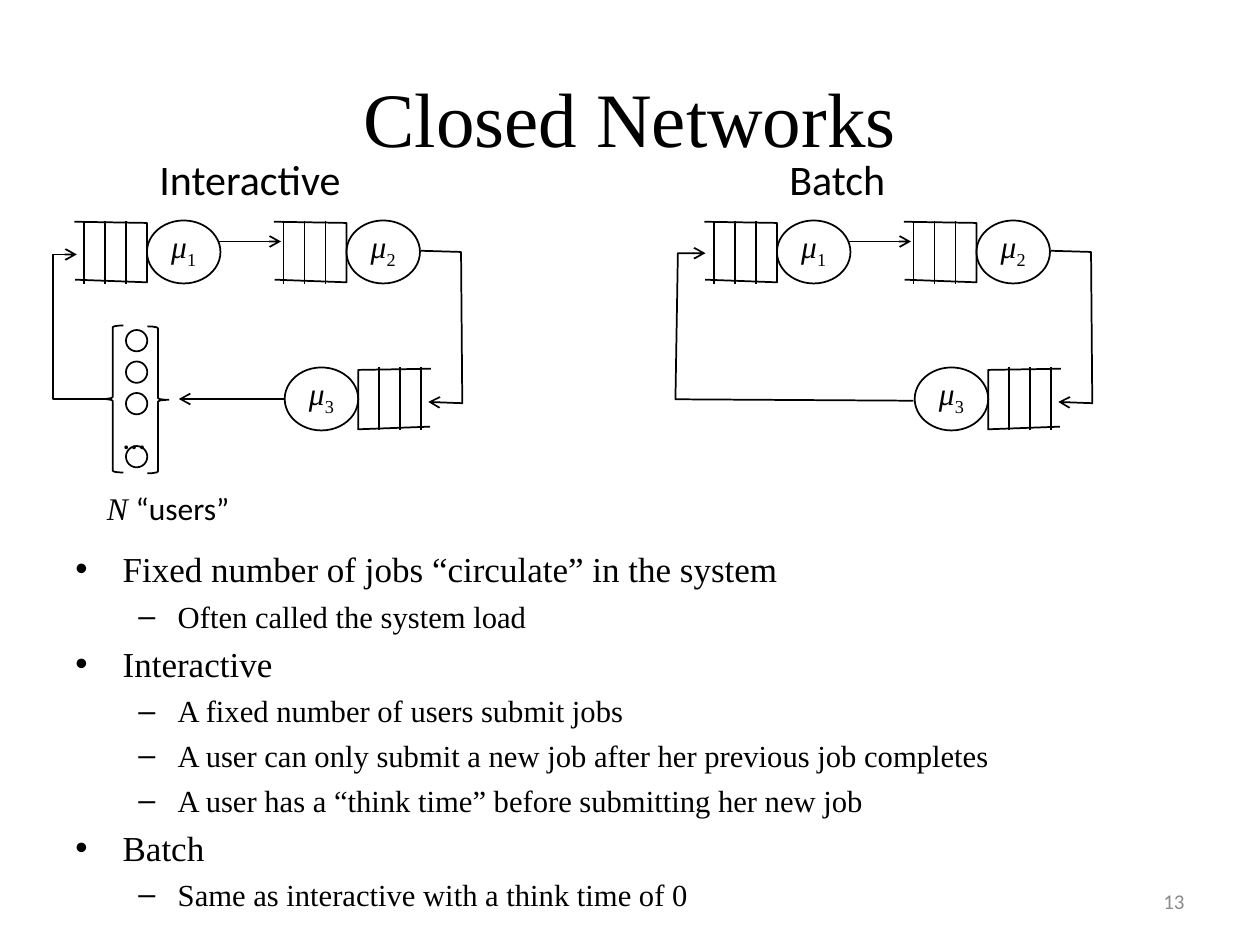
from lxml.etree import SubElement
from pptx import Presentation
from pptx.dml.color import RGBColor
from pptx.enum.shapes import MSO_CONNECTOR as Link, MSO_SHAPE as Kind
from pptx.enum.text import MSO_ANCHOR as Anchor, PP_ALIGN as Align
from pptx.oxml.ns import qn
from pptx.util import Pt

BLACK = RGBColor(0, 0, 0)
GRAY = RGBColor(0x8C, 0x8C, 0x8C)
SERIF, SANS = "Times New Roman", "Calibri"

TITLE = "Closed Networks"
BULLETS = [
    (0, "Fixed number of jobs “circulate” in the system"),
    (1, "Often called the system load"),
    (0, "Interactive"),
    (1, "A fixed number of users submit jobs"),
    (1, "A user can only submit a new job after her previous job completes"),
    (1, "A user has a “think time” before submitting her new job"),
    (0, "Batch"),
    (1, "Same as interactive with a think time of 0"),
]
# bullet sign, text size, left margin, hanging indent
LEVELS = [("•", 20, 27, 27), ("–", 17.5, 58.5, 22.5)]

# network name and its shift to the right
NETS = [("Interactive", 0), ("Batch", 360)]
# number, left and top of the server disc, queue on the right
STATIONS = [("1", 84, 126, False), ("2", 198, 126, False),
            ("3", 162.7, 210, True)]
DISC_W, DISC_H, SLOT = 42, 36, 12
QUEUE = [(-41.5, 0.7), (0, 1.4), (0, 35.3), (-41, 33.8)]
DOWN = [(240.5, 143.3), (263.5, 144), (264.2, 230.4), (244.8, 229.7)]
BATCH_LOOP = [(522, 229), (386, 228.2), (387.4, 144.7), (403.2, 144.7)]
USER_LOOP = [(58.3, 228.2), (30.2, 228.2), (30.2, 145.4), (43.9, 145.4)]
USERS = [188.6, 206.6, 224.6, 254.9]
USER_X, USER_D = 72, 12.2


def ink(shape, arrow=False):
    shape.line.color.rgb = BLACK
    shape.line.width = Pt(1)
    if arrow:
        line = shape.element.spPr.find(qn("a:ln"))
        SubElement(line, qn("a:tailEnd"), type="arrow")


def add_line(shapes, x1, y1, x2, y2, arrow=False):
    line = shapes.add_connector(Link.STRAIGHT, Pt(x1), Pt(y1), Pt(x2), Pt(y2))
    ink(line, arrow)
    SubElement(line.element.spPr, qn("a:effectLst"))


def add_path(shapes, points, arrow=False):
    """Draw an open line through the points."""
    spots = [(Pt(x), Pt(y)) for x, y in points]
    pen = shapes.build_freeform(*spots[0])
    pen.add_line_segments(spots[1:], close=False)
    path = pen.convert_to_shape()
    path.fill.background()
    path.shadow.inherit = False
    ink(path, arrow)


def add_outline(shapes, kind, x, y, w, h):
    shape = shapes.add_shape(kind, Pt(x), Pt(y), Pt(w), Pt(h))
    shape.fill.background()
    shape.shadow.inherit = False
    ink(shape)
    return shape


def style(run, face, size, color=BLACK, italic=False):
    font = run.font
    font.name, font.size, font.italic = face, Pt(size), italic
    font.color.rgb = color


def add_label(shapes, x, y, w, h, runs, size, color=BLACK):
    """Add one line of text; runs hold text, font name and italic."""
    frame = shapes.add_textbox(Pt(x), Pt(y), Pt(w), Pt(h)).text_frame
    frame.word_wrap = True
    for text, face, italic in runs:
        run = frame.paragraphs[0].add_run()
        run.text = text
        style(run, face, size, color, italic)
    return frame


def add_station(shapes, name, left, top, flip):
    """Draw a server disc with its waiting line."""
    def place(x):
        return left + (DISC_W - x if flip else x)

    parts = shapes.add_group_shape().shapes
    add_path(parts, [(place(x), top + y) for x, y in QUEUE])
    for i in range(1, 4):
        x = place(-SLOT * i)
        add_line(parts, x, top, x, top + DISC_H)
    disc = add_outline(parts, Kind.OVAL, left, top, DISC_W, DISC_H)
    frame = disc.text_frame
    frame.margin_left = frame.margin_right = frame.margin_top = 0
    frame.margin_bottom = Pt(3.6)
    frame.vertical_anchor = Anchor.MIDDLE
    para = frame.paragraphs[0]
    para.alignment = Align.CENTER
    for text, italic in (("μ", True), (name, False)):
        run = para.add_run()
        run.text = text
        style(run, SERIF, 18, italic=italic)
    run._r.get_or_add_rPr().set("baseline", "-25000")


def add_net(shapes, name, shift):
    for number, left, top, flip in STATIONS:
        add_station(shapes, number, left + shift, top, flip)
    add_line(shapes, 124.6 + shift, 138, 160.6 + shift, 138, True)
    add_path(shapes, [(x + shift, y) for x, y in DOWN], True)
    add_label(shapes, 84 + shift, 84, 180, 36, [(name, SANS, False)], 24)


def add_users(shapes):
    parts = shapes.add_group_shape().shapes
    for y in USERS:
        add_outline(parts, Kind.OVAL, USER_X, y, USER_D, USER_D)
    add_label(parts, 63.4, 235.4, 40, 29, [("…", SANS, False)], 18)
    add_outline(parts, Kind.LEFT_BRACE, 58.3, 186, 12.2, 84)
    add_outline(parts, Kind.RIGHT_BRACE, 84.2, 186.5, 12.2, 84)
    add_label(shapes, 54, 275.8, 108, 29,
              [("N ", SERIF, True), ("“users”", SANS, False)], 18)


def add_bullets(shapes):
    frame = shapes.add_textbox(Pt(36), Pt(309.6), Pt(648), Pt(194.4)).text_frame
    frame.word_wrap = True
    for i, (level, text) in enumerate(BULLETS):
        para = frame.add_paragraph() if i else frame.paragraphs[0]
        sign, size, margin, hang = LEVELS[level]
        para.text = text
        para.level = level
        para.space_before = Pt(4.5)
        style(para.runs[0], SERIF, size)
        props = para._p.get_or_add_pPr()
        props.set("marL", str(Pt(margin)))
        props.set("indent", str(-Pt(hang)))
        SubElement(props, qn("a:buFont"), typeface="Arial")
        SubElement(props, qn("a:buChar"), char=sign)


def main():
    deck = Presentation()
    deck.slide_width, deck.slide_height = Pt(720), Pt(540)
    slide = deck.slides.add_slide(deck.slide_layouts[5])
    shapes = slide.shapes

    title = shapes.title
    title.left, title.top = Pt(36), Pt(21.6)
    title.width, title.height = Pt(648), Pt(90)
    title.text_frame.text = TITLE
    title.text_frame.vertical_anchor = Anchor.MIDDLE
    style(title.text_frame.paragraphs[0].runs[0], SERIF, 44)

    add_bullets(shapes)
    for name, shift in NETS:
        add_net(shapes, name, shift)
    add_path(shapes, BATCH_LOOP, True)
    add_line(shapes, 162.7, 228, 102.2, 228, True)
    add_users(shapes)
    add_path(shapes, USER_LOOP, True)

    page = add_label(shapes, 516, 500.5, 168, 28.8, [("13", SANS, False)], 12, GRAY)
    page.vertical_anchor = Anchor.MIDDLE
    page.paragraphs[0].alignment = Align.RIGHT
    deck.save("out.pptx")


if __name__ == "__main__":
    main()
